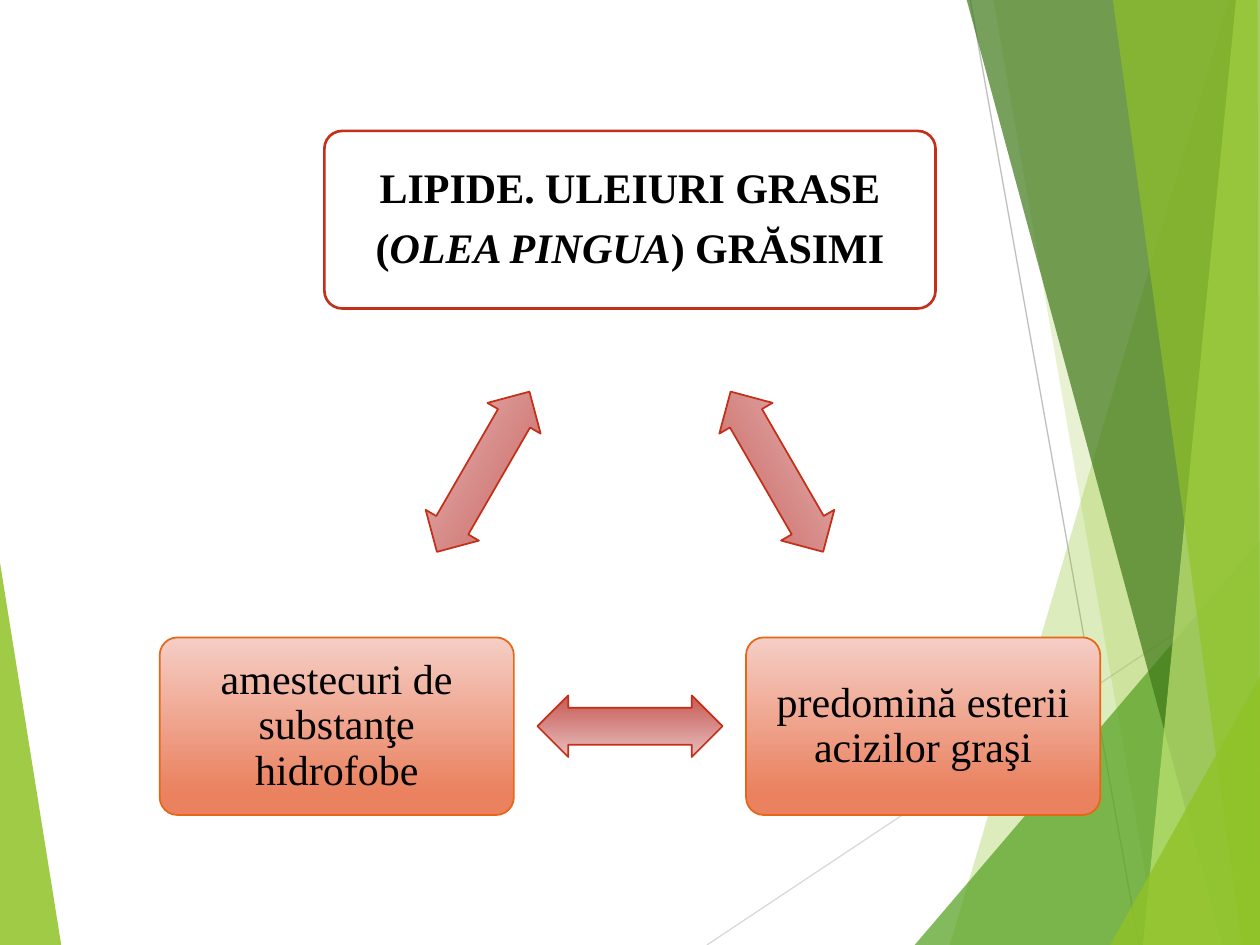
import pptx
import pptx.dml.color
import pptx.enum.shapes
import pptx.enum.text
import pptx.oxml
import pptx.oxml.ns
import pptx.util
from pptx.util import Cm

SHAPES = pptx.enum.shapes.MSO_SHAPE
COLORS = {
    "white": "FFFFFF", "black": "000000",
    "lime": "90C226", "green": "54A021", "forest": "3F7819", "pale": "C0E474",
    "line_light": "D9D9D9", "line_mid": "BFBFBF",
    "red": "C42F1A", "orange": "E76618",
    "rose_light": "E6BFBE", "rose": "CB6560",
    "peach_light": "F5CEC5", "peach": "EA815F",
}
W, H = 25.4, 19.05
TOP, RIGHT = -0.03, 25.43  # facets bleed slightly past the edges
MID = W / 2


def rgb(name):
    return pptx.dml.color.RGBColor.from_string(COLORS[name])


class Deck:
    font, size = "Times New Roman", 24

    def __init__(self, slide):
        self.s = slide

    def facet(self, points, color, opacity):
        """Draw a borderless polygon; opacity is in percent."""
        pts = [(Cm(x), Cm(y)) for x, y in points]
        builder = self.s.shapes.build_freeform(*pts[0])
        builder.add_line_segments(pts[1:], close=True)
        sp = builder.convert_to_shape()
        sp.shadow.inherit = False
        sp.fill.solid()
        sp.fill.fore_color.rgb = rgb(color)
        clr = sp.fill._xPr.find(".//" + pptx.oxml.ns.qn("a:srgbClr"))
        alpha = pptx.oxml.parse_xml(
            f'<a:alpha {pptx.oxml.ns.nsdecls("a")} val="{opacity * 1000}"/>')
        clr.append(alpha)
        sp.line.fill.background()

    def line(self, start, end, color):
        cx = self.s.shapes.add_connector(
            pptx.enum.shapes.MSO_CONNECTOR.STRAIGHT,
            *(Cm(v) for v in start + end))
        cx.line.color.rgb = rgb(color)
        cx.line.width = pptx.util.Pt(0.75)
        cx._element.spPr.append(pptx.oxml.parse_xml(
            f'<a:effectLst {pptx.oxml.ns.nsdecls("a")}/>'))

    def shape(self, kind, center, size, adjust, fill, line, width=1):
        """Add a preset shape by its centre; two fill names make a gradient."""
        (x, y), (w, h) = center, size
        sp = self.s.shapes.add_shape(
            kind, Cm(x - w / 2), Cm(y - h / 2), Cm(w), Cm(h))
        sp.shadow.inherit = False
        for i, value in enumerate(adjust):
            sp.adjustments[i] = value
        if len(fill) == 1:
            sp.fill.solid()
            sp.fill.fore_color.rgb = rgb(fill[0])
        else:
            sp.fill.gradient()
            sp.fill.gradient_angle = 270
            stops = sp.fill.gradient_stops
            for stop, color, position in zip(stops, fill, (0, 0.88)):
                stop.color.rgb = rgb(color)
                stop.position = position
        sp.line.color.rgb = rgb(line)
        sp.line.width = pptx.util.Pt(width)
        return sp

    def box(self, center, width, paragraphs, fill, line, border=1, bold=False):
        """Add a rounded box; paragraphs are lists of (text, italic) runs."""
        sp = self.shape(SHAPES.ROUNDED_RECTANGLE, center, (width, 3.58),
                        [0.1], fill, line, border)
        tf = sp.text_frame
        tf.word_wrap = True
        tf.vertical_anchor = pptx.enum.text.MSO_ANCHOR.MIDDLE
        tf.margin_left = tf.margin_right = Cm(0.36)
        tf.margin_top = tf.margin_bottom = Cm(0.36)
        for i, runs in enumerate(paragraphs):
            p = tf.add_paragraph() if i else tf.paragraphs[0]
            p.alignment = pptx.enum.text.PP_ALIGN.CENTER
            p.line_spacing = 0.9
            if i < len(paragraphs) - 1:
                p.space_after = pptx.util.Pt(0.35 * self.size)
            for text, italic in runs:
                r = p.add_run()
                r.text = text
                r.font.name = self.font
                r.font.size = pptx.util.Pt(self.size)
                r.font.bold = bold
                r.font.italic = italic
                r.font.color.rgb = rgb("black")

    def arrow(self, center, rotation):
        sp = self.shape(SHAPES.LEFT_RIGHT_ARROW, center, (3.73, 1.24),
                        [0.6, 0.5], ("rose_light", "rose"), "red")
        sp.rotation = rotation


def draw_background(deck):
    deck.facet([(TOP, 11.15), (1.24, 19.08), (TOP, H)], "lime", 85)
    deck.line((14.25, H), (RIGHT, 11.61), "line_light")
    deck.line((19.56, 0), (22.96, H), "line_mid")
    for points, color, opacity in [
        ([(24.77, 0), (19.15, H), (RIGHT, H), (RIGHT, 0)], "lime", 30),
        ([(20.02, TOP), (23.34, H), (RIGHT, H), (RIGHT, TOP)], "lime", 20),
        ([(18.44, H), (W, 10.9), (RIGHT, H)], "green", 72),
        ([(19.48, TOP), (24.64, H), (RIGHT, H), (RIGHT, TOP)], "forest", 70),
        ([(24.92, TOP), (23.04, H), (RIGHT, H), (W, TOP)], "pale", 70),
        ([(22.43, TOP), (25.04, H), (W, H), (25.35, TOP)], "lime", 65),
        ([(22.38, H), (RIGHT, 13.59), (RIGHT, H)], "lime", 80),
    ]:
        deck.facet(points, color, opacity)


def draw_cycle(deck):
    base_y, arrow_y, box_dx, arrow_dx = 14.64, 9.51, 5.91, 2.96
    title = [
        [("LIPIDE. ULEIURI GRASE", False)],
        [("(", False), ("OLEA PINGUA", True), (") GRĂSIMI", False)],
    ]
    deck.box((MID, 4.43), 12.32, title, ("white",), "red", 1.5, bold=True)
    deck.arrow((MID + arrow_dx, arrow_y), 60)
    for side, text in [(1, "predomină esterii acizilor graşi"),
                       (-1, "amestecuri de substanţe hidrofobe")]:
        deck.box((MID + side * box_dx, base_y), 7.14, [[(text, False)]],
                 ("peach_light", "peach"), "orange")
    deck.arrow((MID, base_y), 180)
    deck.arrow((MID - arrow_dx, arrow_y), 300)


def main():
    prs = pptx.Presentation()
    prs.slide_width, prs.slide_height = Cm(W), Cm(H)
    deck = Deck(prs.slides.add_slide(prs.slide_layouts[6]))
    draw_background(deck)
    draw_cycle(deck)
    prs.save("out.pptx")


if __name__ == "__main__":
    main()
